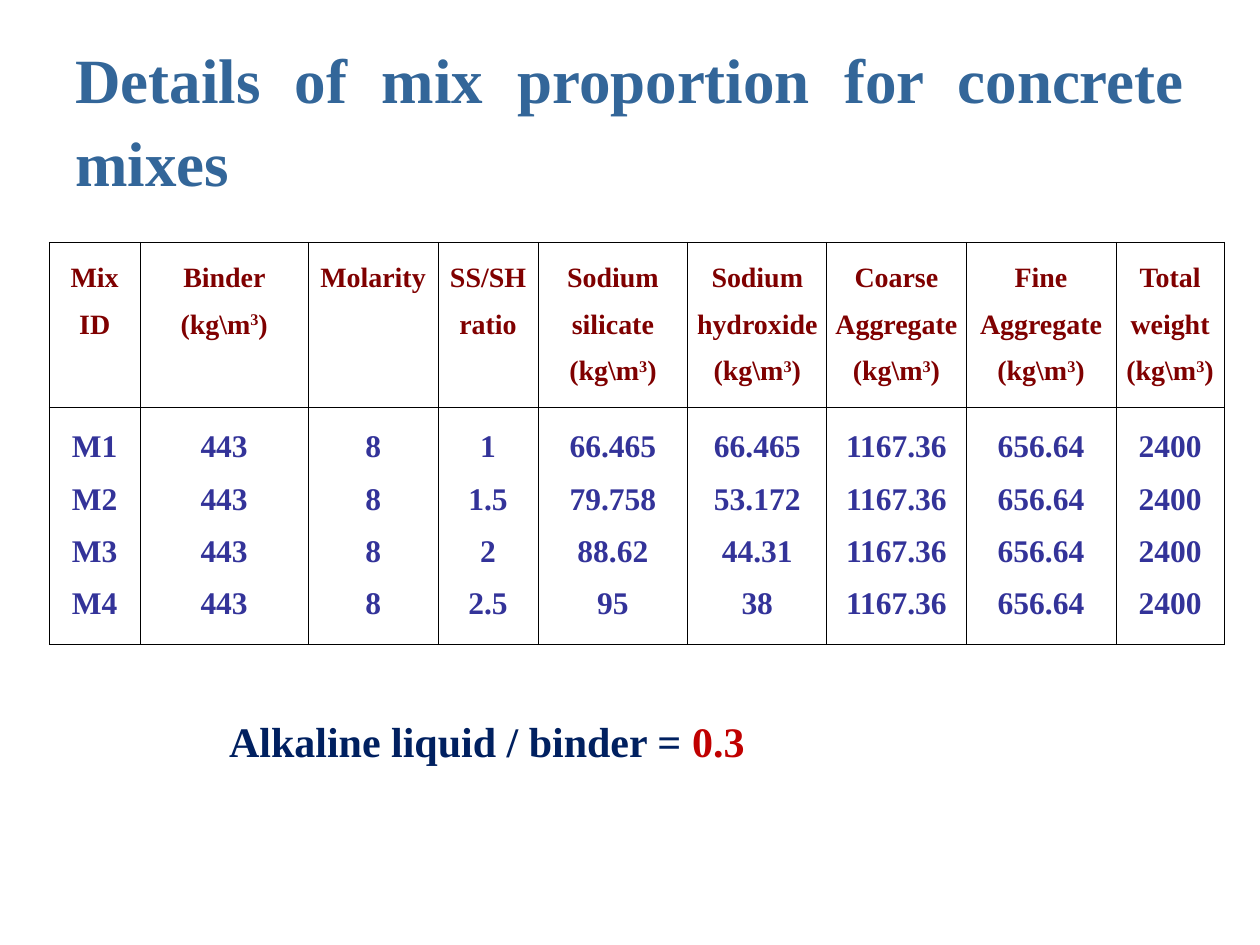
from dataclasses import dataclass

from lxml.etree import SubElement
from pptx import Presentation
from pptx.dml.color import RGBColor
from pptx.enum.text import MSO_ANCHOR as Anchor, PP_ALIGN as Align
from pptx.oxml.ns import qn
from pptx.util import Pt

FONT = "Times New Roman"
COLOURS = {
    "title": "336699",
    "maroon": "7F0000",
    "dark_red": "800000",
    "data": "333399",
    "navy": "002060",
    "red": "C00000",
    "border": "000000",
}
CELL_MARGIN = Pt(2.88)
MIX_IDS = ("M1", "M2", "M3", "M4")
UNIT = (" (kg\\m", "3", ")")


@dataclass(frozen=True)
class Column:
    heading: str
    width: float
    values: tuple
    colour: str = "maroon"
    has_unit: bool = False


def constant(value: str) -> tuple:
    """The same value for every mix."""
    return (value,) * len(MIX_IDS)


COLUMNS = (
    Column("Mix ID", 51.8, MIX_IDS),
    Column("Binder", 96.2, constant("443"), has_unit=True),
    Column("Molarity", 74.1, constant("8")),
    Column("SS/SH ratio", 57.2, ("1", "1.5", "2", "2.5"), "dark_red"),
    Column("Sodium silicate", 85.6, ("66.465", "79.758", "88.62", "95"), has_unit=True),
    Column("Sodium hydroxide", 79.4, ("66.465", "53.172", "44.31", "38"), has_unit=True),
    Column("Coarse Aggregate", 79.6, constant("1167.36"), "dark_red", True),
    Column("Fine Aggregate", 85.7, constant("656.64"), has_unit=True),
    Column("Total weight", 61.8, constant("2400"), "dark_red", True),
)


def add_text(p, text: str, *, size: float, colour: str, raised: bool = False) -> None:
    r = p.add_run()
    r.text = text
    r.font.name = FONT
    r.font.size = Pt(size)
    r.font.bold = True
    r.font.color.rgb = RGBColor.from_string(COLOURS[colour])
    if raised:
        r._r.get_or_add_rPr().set("baseline", "30000")


def add_box(slide, left: float, top: float, width: float, height: float, anchor=Anchor.TOP):
    """Add a wrapping text box and return its first paragraph."""
    tf = slide.shapes.add_textbox(Pt(left), Pt(top), Pt(width), Pt(height)).text_frame
    tf.word_wrap = True
    tf.vertical_anchor = anchor
    return tf.paragraphs[0]


def style_cell(cell) -> None:
    """Thin black borders, no fill and narrow margins."""
    cell.margin_left = cell.margin_right = CELL_MARGIN
    cell.margin_top = cell.margin_bottom = CELL_MARGIN
    tc_pr = cell._tc.get_or_add_tcPr()
    for side in ("lnL", "lnR", "lnT", "lnB"):
        ln = SubElement(tc_pr, qn(f"a:{side}"), w=str(Pt(0.5)))
        fill = SubElement(ln, qn("a:solidFill"))
        SubElement(fill, qn("a:srgbClr"), val=COLOURS["border"])
    cell.fill.background()


def format_paragraph(p) -> None:
    p.alignment = Align.CENTER
    p.line_spacing = 1.5


def fill_heading(cell, column: Column) -> None:
    p = cell.text_frame.paragraphs[0]
    format_paragraph(p)
    add_text(p, column.heading, size=16, colour=column.colour)
    if column.has_unit:
        for part in UNIT:
            add_text(p, part, size=16, colour=column.colour, raised=part == "3")


def fill_values(cell, column: Column) -> None:
    tf = cell.text_frame
    for i, value in enumerate(column.values):
        p = tf.add_paragraph() if i else tf.paragraphs[0]
        format_paragraph(p)
        add_text(p, value, size=18, colour="data")


def add_mix_table(slide) -> None:
    width = sum(c.width for c in COLUMNS)
    frame = slide.shapes.add_table(2, len(COLUMNS), Pt(28.2), Pt(138.4), Pt(width), Pt(221))
    table = frame.table
    table.first_row = table.horz_banding = False
    table.rows[0].height = Pt(94.3)
    table.rows[1].height = Pt(126.7)
    for i, column in enumerate(COLUMNS):
        table.columns[i].width = Pt(column.width)
        for row, fill in enumerate((fill_heading, fill_values)):
            cell = table.cell(row, i)
            style_cell(cell)
            fill(cell, column)


def main() -> None:
    prs = Presentation()
    prs.slide_width, prs.slide_height = Pt(720), Pt(540)
    slide = prs.slides.add_slide(prs.slide_layouts[6])

    title = add_box(slide, 36, 21.6, 648, 90, Anchor.MIDDLE)
    title.alignment = Align.JUSTIFY
    title.line_spacing = 1.09
    add_text(title, "Details of mix proportion for concrete mixes", size=36, colour="title")

    add_mix_table(slide)

    ratio = add_box(slide, 123.8, 405.4, 315.4, 36)
    add_text(ratio, "Alkaline liquid / binder =", size=24, colour="navy")
    add_text(ratio, " 0.3", size=24, colour="red")

    prs.save("out.pptx")


if __name__ == "__main__":
    main()
